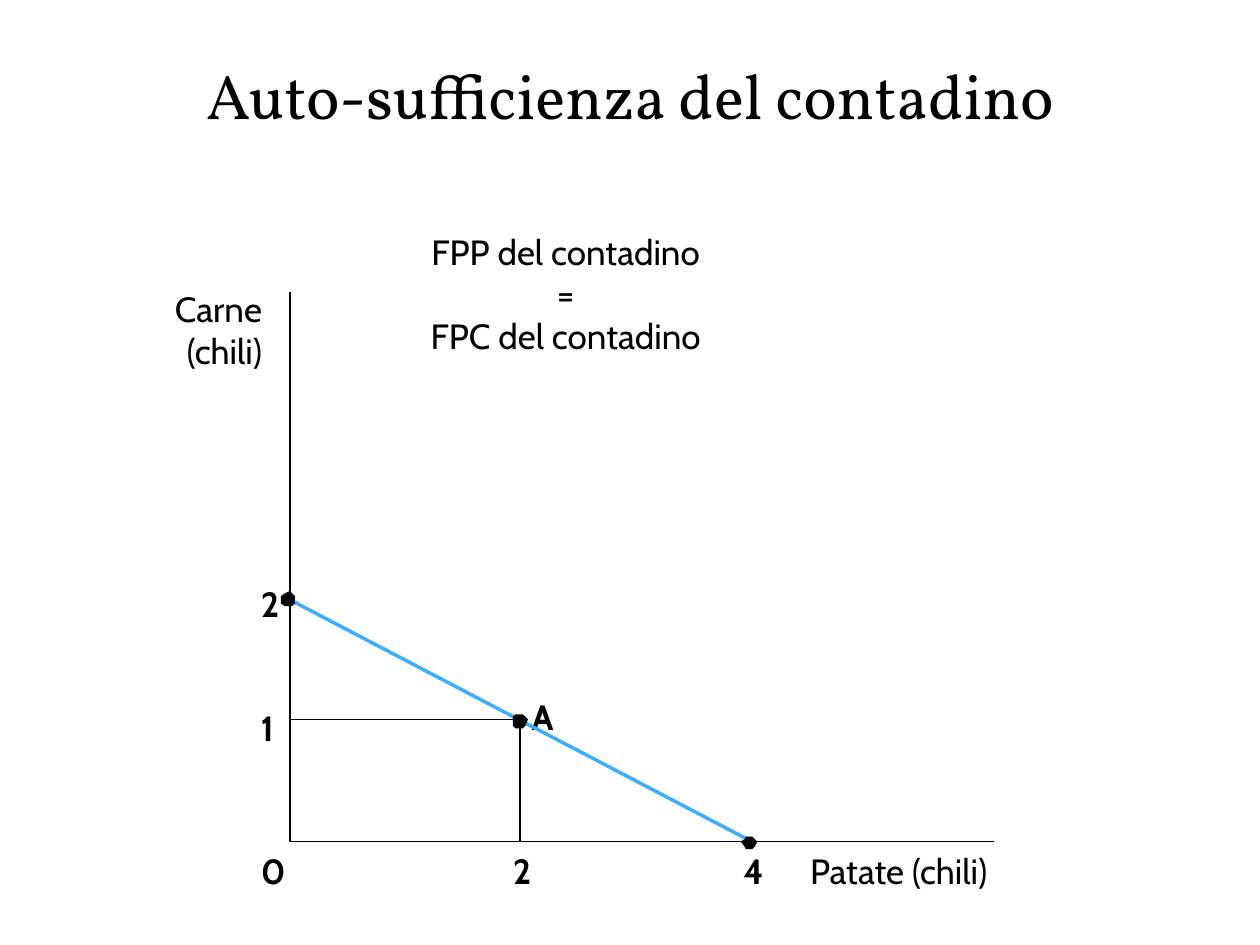
from lxml import etree
from pptx import Presentation
from pptx import util as u
from pptx.dml.color import RGBColor
from pptx.enum import shapes, text
from pptx.oxml.ns import qn

HUES = {"ink": "000000", "curve": "40AEFF"}
TITLE = "Auto-sufficienza del contadino"
LEFT, MID, RIGHT = text.PP_ALIGN.LEFT, text.PP_ALIGN.CENTER, text.PP_ALIGN.RIGHT

# Labels: lines, left, top, width, bold, alignment
ROW = 6.74
LABELS = [
    (["1"], 2.07, 5.61, 0.14, True, LEFT),
    (["2"], 2.07, 4.62, 0.14, True, LEFT),
    (["Patate (chili)"], 6.43, ROW, 1.51, False, LEFT),
    (["2"], 4.07, ROW, 0.14, True, LEFT),
    (["4"], 5.9, ROW, 0.14, True, LEFT),
    (["A"], 4.22, 5.52, 0.2, True, LEFT),
    (["0"], 2.07, ROW, 0.14, True, LEFT),
    (["Carne", "(chili)"], 1.36, 2.28, 0.72, False, RIGHT),
    (["FPP del contadino", "=", "FPC del contadino"], 3.41, 1.83, 2.16, False, MID),
]

# Graph geometry
X0, Y0 = 2.3, 6.68
AXES = [(X0, 2.32), (X0, Y0), (7.89, Y0)]
GUIDES = [(X0, 5.71), (4.13, 5.71), (4.13, Y0)]
CURVE = [(2.32, 4.77), (5.93, 6.66)]
DOTS = [
    [(5.95, 6.74), (5.97, 6.74), (5.99, 6.72), (6.01, 6.68), (5.99, 6.66), (5.97, 6.64),
     (5.95, 6.64), (5.92, 6.64), (5.91, 6.66), (5.88, 6.68), (5.91, 6.72), (5.92, 6.74)],
    [(4.13, 5.78), (4.15, 5.78), (4.17, 5.76), (4.19, 5.71), (4.17, 5.69), (4.15, 5.67),
     (4.13, 5.67), (4.09, 5.67), (4.07, 5.69), (4.07, 5.76), (4.09, 5.78)],
    [(2.3, 4.81), (2.32, 4.81), (2.34, 4.79), (2.34, 4.73), (2.32, 4.71), (2.3, 4.69),
     (2.26, 4.71), (2.23, 4.73), (2.23, 4.79), (2.26, 4.81)],
]


def hue(name):
    return RGBColor.from_string(HUES[name])


def write(par, words, face, size, bold=False, align=MID):
    par.alignment = align
    run = par.add_run()
    run.text = words
    font = run.font
    font.name, font.size, font.bold = face, u.Pt(size), bold
    font.color.rgb = hue("ink")


def label(slide, lines, left, top, width, bold, align):
    box = slide.shapes.add_textbox(u.Inches(left), u.Inches(top), u.Inches(width),
                                   u.Inches(round(len(lines) / 3, 2)))
    frame = box.text_frame
    frame.margin_left = frame.margin_right = frame.margin_top = frame.margin_bottom = 0
    frame.word_wrap = False
    frame.auto_size = text.MSO_AUTO_SIZE.SHAPE_TO_FIT_TEXT
    for i, words in enumerate(lines):
        par = frame.add_paragraph() if i else frame.paragraphs[0]
        write(par, words, "Cabin", 20, bold, align)


def outline(slide, points, solid):
    spots = [(u.Inches(x), u.Inches(y)) for x, y in points]
    pen = slide.shapes.build_freeform(*spots[0])
    pen.add_line_segments(spots[1:], close=solid)
    shape = pen.convert_to_shape()
    shape.shadow.inherit = False
    if solid:
        shape.fill.solid()
        shape.fill.fore_color.rgb = hue("ink")
        shape.line.fill.background()
    else:
        shape.fill.background()
        shape.line.color.rgb = hue("ink")
        shape.line.width = u.Pt(1)


def main():
    deck = Presentation()
    deck.slide_width, deck.slide_height = u.Inches(10), u.Inches(7.5)
    slide = deck.slides.add_slide(deck.slide_layouts[5])

    # Title
    title = slide.shapes.title
    title.left, title.top = u.Inches(0.75), u.Inches(0.25)
    title.width, title.height = u.Inches(8.5), u.Inches(1)
    title.text_frame.vertical_anchor = text.MSO_ANCHOR.MIDDLE
    write(title.text_frame.paragraphs[0], TITLE, "Vollkorn", 36)

    # Labels
    for item in LABELS:
        label(slide, *item)

    # Axes and frontier
    outline(slide, AXES, False)
    ends = [u.Inches(v) for point in CURVE for v in point]
    curve = slide.shapes.add_connector(shapes.MSO_CONNECTOR.STRAIGHT, *ends)
    curve.line.color.rgb = hue("curve")
    curve.line.width = u.Pt(2)
    etree.SubElement(curve._element.spPr, qn("a:effectLst"))

    # Guides and points
    outline(slide, GUIDES, False)
    for dot in DOTS:
        outline(slide, dot, True)

    deck.save("out.pptx")


if __name__ == "__main__":
    main()
